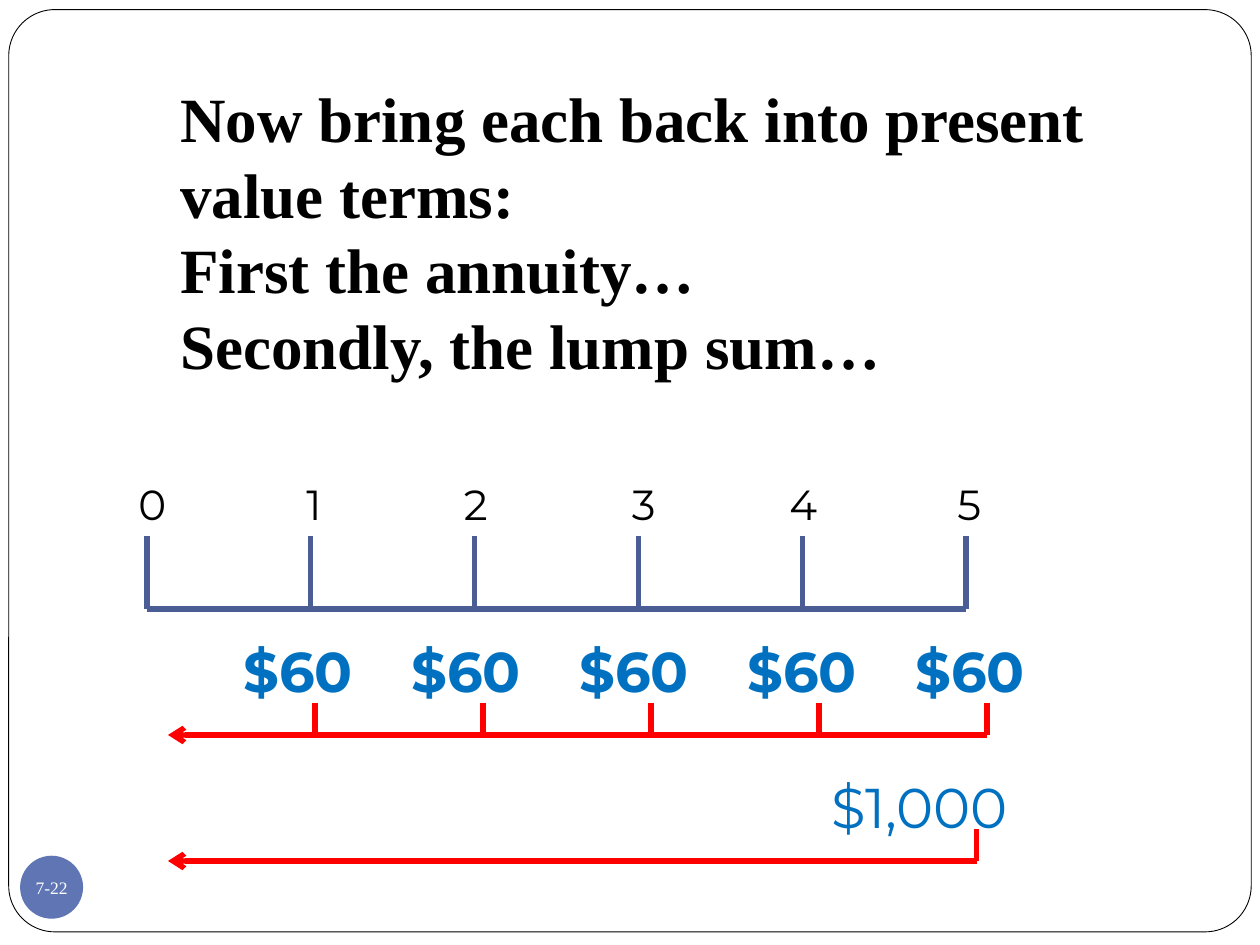
from lxml import etree
from pptx import Presentation
from pptx.dml.color import RGBColor
from pptx.enum import shapes as sh, text as tx
from pptx.oxml import ns
from pptx.util import Pt

HUES = {
    "paper": "FFFFFF", "ink": "000000", "badge": "6076B4",
    "axis": "4A5D94", "cash": "0070C0", "back": "FF0000",
}
SERIF, SANS = "Times New Roman", "Montserrat"


def write(words, box=None, shape=None, size=24, font=SANS, hue="ink",
          bold=False, align=tx.PP_ALIGN.LEFT):
    """Put lines of text in a given shape or in a new text box."""
    if shape is None:
        shape = slide.shapes.add_textbox(*map(Pt, box))
        shape.text_frame.word_wrap = True
    frame = shape.text_frame
    frame.text = words
    for para in frame.paragraphs:
        para.alignment = align
        face = para.runs[0].font
        face.size, face.name, face.bold = Pt(size), font, bold
        face.color.rgb = RGBColor.from_string(HUES[hue])


def rule(x1, y1, x2, y2, hue, arrow=False):
    """Draw a straight line, with an arrowhead at its end if asked."""
    line = slide.shapes.add_connector(
        sh.MSO_CONNECTOR.STRAIGHT, *map(Pt, (x1, y1, x2, y2)))
    line.line.width = Pt(3)
    line.line.color.rgb = RGBColor.from_string(HUES[hue])
    props = line._element.spPr
    if arrow:
        etree.SubElement(props.find(ns.qn("a:ln")), ns.qn("a:tailEnd"), type="arrow")
    etree.SubElement(props, ns.qn("a:effectLst"))


deck = Presentation()
deck.slide_width, deck.slide_height = Pt(720), Pt(540)
slide = deck.slides.add_slide(deck.slide_layouts[6])

# Rounded frame
frame = slide.shapes.add_shape(
    sh.MSO_SHAPE.ROUNDED_RECTANGLE, Pt(5), Pt(5.5), Pt(710), Pt(527))
frame.adjustments[0] = 0.05
frame.shadow.inherit = False
frame.fill.solid()
frame.fill.fore_color.rgb = RGBColor.from_string(HUES["paper"])
frame.line.width = Pt(0.5)
frame.line.color.rgb = RGBColor.from_string(HUES["ink"])

# Page number badge
badge = slide.shapes.add_shape(
    sh.MSO_SHAPE.OVAL, Pt(11.5), Pt(489), Pt(36), Pt(36))
badge.shadow.inherit = False
badge.fill.solid()
badge.fill.fore_color.rgb = RGBColor.from_string(HUES["badge"])
badge.line.fill.background()
inner = badge.text_frame
inner.margin_left = inner.margin_right = inner.margin_top = inner.margin_bottom = 0
inner.word_wrap = False
inner.vertical_anchor = tx.MSO_ANCHOR.MIDDLE
write("7-22", shape=badge, size=10, font=SERIF, hue="paper",
      align=tx.PP_ALIGN.CENTER)

# Heading
write("Now bring each back into present value terms:\n"
      "First the annuity…\nSecondly, the lump sum…",
      box=(96, 42, 546, 181), size=36, font=SERIF, bold=True)

# Annuity payments, each brought back to time zero
for i in range(5):
    write("$60", box=(132 + 96 * i, 360, 84, 46), size=32, hue="cash", bold=True)
    rule(180 + 96 * i, 402, 180 + 96 * i, 420, "back")
rule(564, 420, 96, 420, "back", arrow=True)

# Lump sum brought back to time zero
write("$1,000", box=(468, 438, 162, 46), size=32, hue="cash")
rule(558, 474, 558, 492, "back")
rule(558, 492, 96, 492, "back", arrow=True)

# Timeline with years
rule(84, 348, 552, 348, "axis")
years = [(72, 48), (168, 19), (258, 22), (354, 22), (444, 26), (540, 30)]
for year, (left, width) in enumerate(years):
    tick = 84 + 93.6 * year
    rule(tick, 306, tick, 348, "axis")
    write(str(year), box=(left, 270, width, 36))

deck.save("out.pptx")
